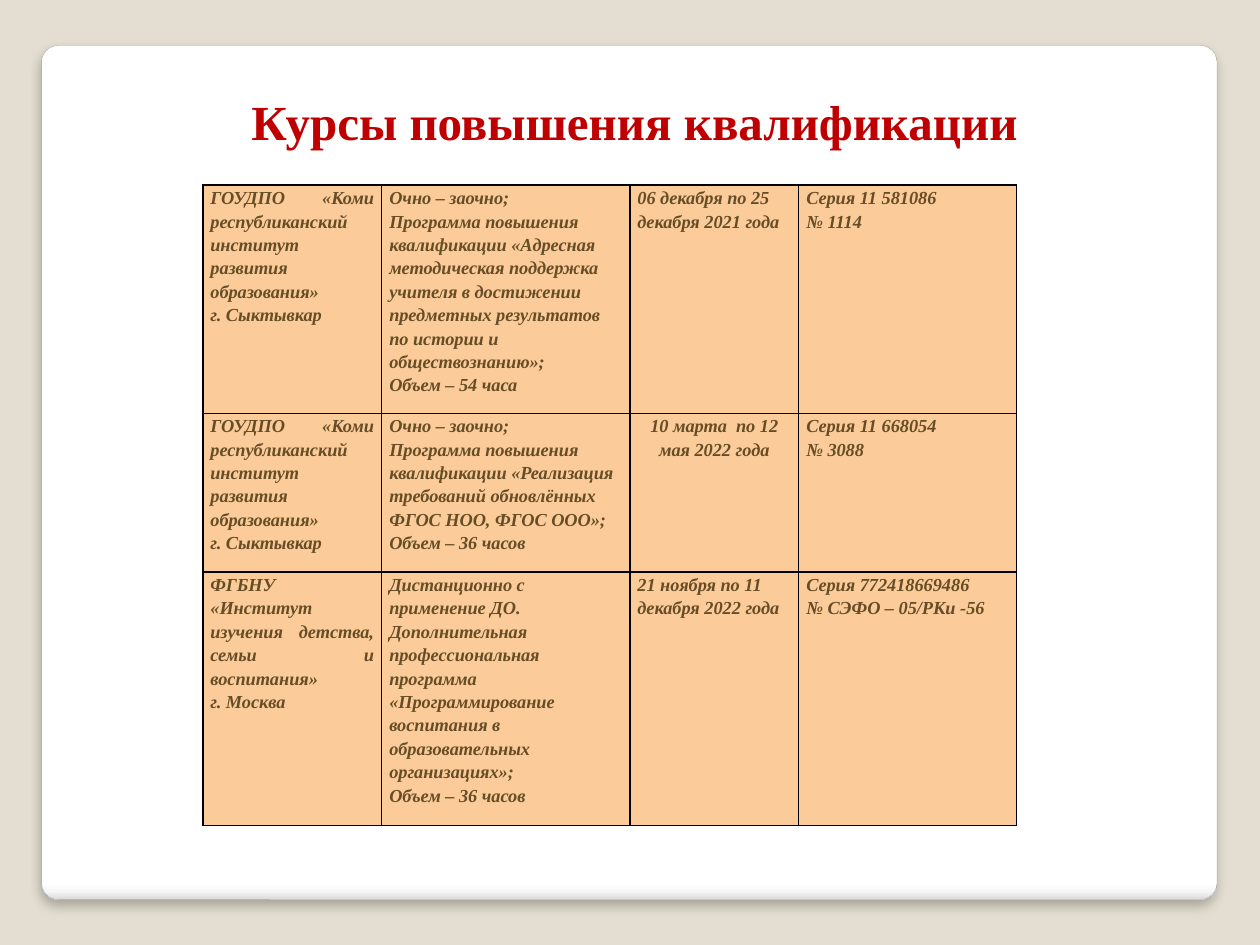
import pptx
import pptx.util
import pptx.dml.color
import pptx.enum.shapes
import pptx.enum.text
import pptx.oxml
from pptx.oxml.ns import nsdecls

ALIGN = pptx.enum.text.PP_ALIGN
ANCHOR = pptx.enum.text.MSO_ANCHOR
inch = pptx.util.Inches

TITLE = "Курсы повышения квалификации"
KOMI = ["ГОУДПО «Коми республиканский институт развития образования»", "г. Сыктывкар"]
COURSES = [
    (KOMI,
     ["Очно – заочно;",
      "Программа повышения квалификации «Адресная методическая поддержка учителя "
      "в достижении предметных результатов по истории и обществознанию»;",
      "Объем – 54 часа"],
     ["06 декабря по 25 декабря 2021 года"],
     ["Серия 11 581086", "№ 1114"]),
    (KOMI,
     ["Очно – заочно;",
      "Программа повышения квалификации «Реализация требований обновлённых "
      "ФГОС НОО, ФГОС ООО»;",
      "Объем – 36 часов"],
     ["10 марта  по 12 мая 2022 года"],
     ["Серия 11 668054", "№ 3088"]),
    (["ФГБНУ «Институт изучения детства, семьи и воспитания»", "г. Москва"],
     ["Дистанционно с применение ДО.",
      "Дополнительная профессиональная программа «Программирование воспитания "
      "в образовательных организациях»;",
      "Объем – 36 часов"],
     ["21 ноября по 11 декабря 2022 года"],
     ["Серия 772418669486", "№ СЭФО – 05/РКи -56"]),
]
COLUMN_WIDTHS = [1.42, 1.97, 1.34, 1.73]
ROW_HEIGHTS = [1.81, 1.26, 2.01]
COLUMN_ALIGN = [ALIGN.JUSTIFY, ALIGN.LEFT, ALIGN.LEFT, ALIGN.LEFT]
CENTRED_CELLS = {(1, 2)}

TITLE_FONT = {"name": "Times New Roman", "size": pptx.util.Pt(28), "bold": True}
CELL_FONT = {"name": "Times New Roman", "size": pptx.util.Pt(10.5),
             "bold": True, "italic": True}
CELL_MARGINS = {"margin_left": inch(0.06), "margin_right": inch(0.06),
                "margin_top": 0, "margin_bottom": 0}
PANEL_STOPS = [(0, "FFFFFF"), (98, "FFFFFF"), (99, "F7F7F7"), (100, "DADADA")]


def colour(value):
    return pptx.dml.color.RGBColor.from_string(value)


def apply(target, values):
    for name, value in values.items():
        setattr(target, name, value)


def paint(fill, value):
    fill.solid()
    fill.fore_color.rgb = colour(value)


def write(para, text, font, value, align):
    span = para.add_run()
    span.text = text
    apply(span.font, font)
    span.font.color.rgb = colour(value)
    para.alignment = align


def xml(text):
    """Parse one element, given without its namespace declaration."""
    head, rest = text.split(">", 1)
    return pptx.oxml.parse_xml(f"{head} {nsdecls('a')}>{rest}")


def add_panel(page):
    """Rounded white panel, shaded along its lower edge."""
    panel = page.shapes.add_shape(
        pptx.enum.shapes.MSO_SHAPE.ROUNDED_RECTANGLE,
        inch(0.33), inch(0.36), inch(9.33), inch(6.78))
    panel.adjustments[0] = 0.02
    panel.line.color.rgb = colour("A4A4A4")
    panel.line.width = pptx.util.Pt(0.16)
    stops = "".join(f'<a:gs pos="{share * 1000}"><a:srgbClr val="{value}"/></a:gs>'
                    for share, value in PANEL_STOPS)
    panel.line._ln.addprevious(xml(
        f'<a:gradFill><a:gsLst>{stops}</a:gsLst><a:lin ang="5400000" scaled="0"/></a:gradFill>'))
    panel.line._ln.addnext(xml(
        '<a:effectLst><a:outerShdw blurRad="76200" dist="50800" dir="5400000" '
        'algn="tl" rotWithShape="0"><a:srgbClr val="000000"><a:alpha val="25000"/>'
        '</a:srgbClr></a:outerShdw></a:effectLst>'))


def add_title(page):
    box = page.shapes.add_textbox(inch(0.98), inch(0.65), inch(8.11), inch(1.18))
    frame = box.text_frame
    apply(frame, {"word_wrap": True, "vertical_anchor": ANCHOR.MIDDLE,
                  "margin_bottom": inch(0.61)})
    write(frame.paragraphs[0], TITLE, TITLE_FONT, "C00000", ALIGN.CENTER)


def add_borders(cell):
    properties = cell._tc.get_or_add_tcPr()
    for index, side in enumerate(("lnL", "lnR", "lnT", "lnB")):
        properties.insert(index, xml(
            f'<a:{side} w="12700"><a:solidFill><a:srgbClr val="000000"/>'
            f'</a:solidFill></a:{side}>'))


def fill_cell(cell, lines, align):
    apply(cell, CELL_MARGINS)
    paint(cell.fill, "FBCC9A")
    add_borders(cell)
    frame = cell.text_frame
    for index, line in enumerate(lines):
        para = frame.add_paragraph() if index else frame.paragraphs[0]
        write(para, line, CELL_FONT, "674D26", align)
        para.line_spacing = 1.15


def add_courses(page):
    table = page.shapes.add_table(
        len(COURSES), len(COLUMN_WIDTHS), inch(1.61), inch(1.47),
        inch(sum(COLUMN_WIDTHS)), inch(sum(ROW_HEIGHTS))).table
    apply(table, {"first_row": False, "horz_banding": False})
    for column, width in zip(table.columns, COLUMN_WIDTHS):
        column.width = inch(width)
    for row, height in zip(table.rows, ROW_HEIGHTS):
        row.height = inch(height)
    for r, course in enumerate(COURSES):
        for c, lines in enumerate(course):
            align = ALIGN.CENTER if (r, c) in CENTRED_CELLS else COLUMN_ALIGN[c]
            fill_cell(table.cell(r, c), lines, align)


def main():
    deck = pptx.Presentation()
    apply(deck, {"slide_width": inch(10), "slide_height": inch(7.5)})
    page = deck.slides.add_slide(deck.slide_layouts[6])
    paint(page.background.fill, "E3DED1")
    add_panel(page)
    add_title(page)
    add_courses(page)
    deck.save("out.pptx")


if __name__ == "__main__":
    main()
